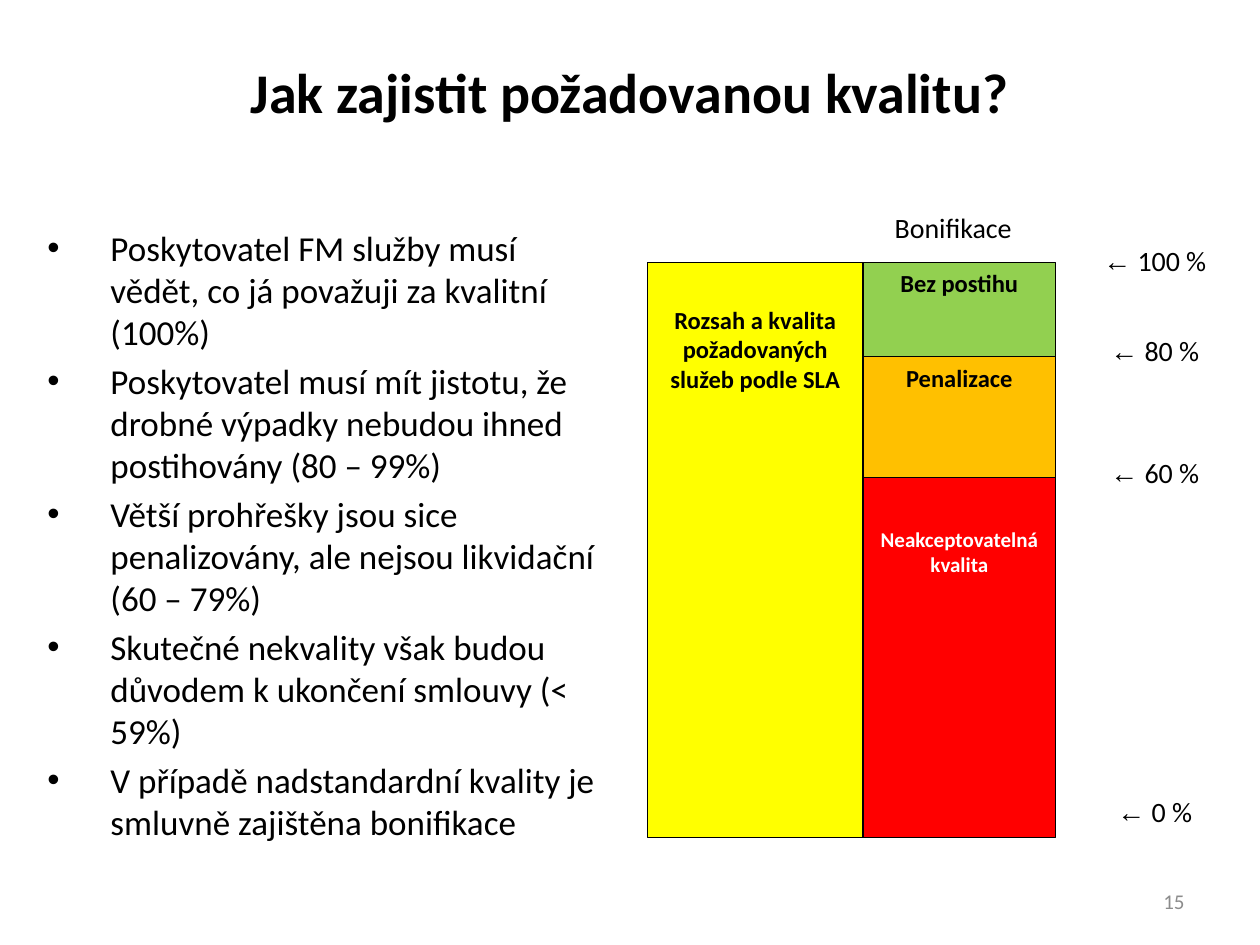
from lxml import etree
from pptx import Presentation
from pptx.dml.color import RGBColor
from pptx.enum.shapes import MSO_SHAPE
from pptx.enum.text import MSO_ANCHOR, PP_ALIGN
from pptx.oxml.ns import qn
from pptx.util import Pt

RECT = MSO_SHAPE.RECTANGLE
TOP, MIDDLE = MSO_ANCHOR.TOP, MSO_ANCHOR.MIDDLE
CENTER, RIGHT = PP_ALIGN.CENTER, PP_ALIGN.RIGHT

BLACK = RGBColor(0x00, 0x00, 0x00)
WHITE = RGBColor(0xFF, 0xFF, 0xFF)
GREY = RGBColor(0x8C, 0x8C, 0x8C)
YELLOW = RGBColor(0xFF, 0xFF, 0x00)
GREEN = RGBColor(0x92, 0xD0, 0x50)
ORANGE = RGBColor(0xFF, 0xC0, 0x00)
RED = RGBColor(0xFF, 0x00, 0x00)


def add_run(paragraph, text, size, color=BLACK, bold=False, font="Calibri"):
    run = paragraph.add_run()
    run.text = text
    run.font.name = font
    run.font.size = Pt(size)
    run.font.bold = bold
    run.font.color.rgb = color


def add_box(left, top, width, height, fill, outlined=False, inset=3.6):
    """Add a filled rectangle and return its centred first paragraph."""
    box = slide.shapes.add_shape(RECT, Pt(left), Pt(top), Pt(width), Pt(height))
    box.shadow.inherit = False
    box.fill.solid()
    box.fill.fore_color.rgb = fill
    if outlined:
        box.line.color.rgb = BLACK
        box.line.width = Pt(0.75)
    else:
        box.line.fill.background()
    frame = box.text_frame
    frame.word_wrap = True
    frame.vertical_anchor = TOP
    frame.margin_top = Pt(inset)
    frame.paragraphs[0].alignment = CENTER
    return frame.paragraphs[0]


prs = Presentation()
prs.slide_width, prs.slide_height = Pt(720), Pt(540)
slide = prs.slides.add_slide(prs.slide_layouts[5])

# Title
title = slide.shapes.title
title.left, title.top, title.width, title.height = Pt(36), Pt(21.6), Pt(648), Pt(61.2)
title.text_frame.vertical_anchor = MIDDLE
heading = title.text_frame.paragraphs[0]
heading.alignment = CENTER
add_run(heading, "Jak zajistit požadovanou kvalitu?", 32, bold=True)

# Bulleted rules
rules = [
    "Poskytovatel FM služby musí vědět, co já považuji za kvalitní (100%)",
    "Poskytovatel musí mít jistotu, že drobné výpadky nebudou ihned postihovány (80 – 99%)",
    "Větší prohřešky jsou sice penalizovány, ale nejsou likvidační (60 – 79%)",
    "Skutečné nekvality však budou důvodem k ukončení smlouvy (< 59%)",
    "V případě nadstandardní kvality je smluvně zajištěna bonifikace",
]
rules_frame = slide.shapes.add_textbox(Pt(20), Pt(126), Pt(334), Pt(356.4)).text_frame
rules_frame.word_wrap = True
for i, rule in enumerate(rules):
    item = rules_frame.add_paragraph() if i else rules_frame.paragraphs[0]
    item.space_before = Pt(4)
    properties = item._p.get_or_add_pPr()
    properties.set("marL", str(Pt(36)))
    properties.set("indent", str(-Pt(36)))
    etree.SubElement(properties, qn("a:buFont")).set("typeface", "Arial")
    etree.SubElement(properties, qn("a:buChar")).set("char", "•")
    add_run(item, rule, 20)

# Required scope column
scope_left, band_left, band_right = 370, 493.2, 603.2
column_top, column_bottom = 149.8, 478.6
scope = add_box(scope_left, column_top, band_left - scope_left,
                column_bottom - column_top, YELLOW, outlined=True, inset=24.5)
add_run(scope, "Rozsah a kvalita požadovaných služeb podle SLA", 14, bold=True)

# Quality bands, stacked: top, text, size, text colour, fill, inset
bands = [
    (column_top, "Bez postihu", 14, BLACK, GREEN, 3.6),
    (203.8, "Penalizace", 14, BLACK, ORANGE, 3.6),
    (272.9, "Neakceptovatelná kvalita", 12, WHITE, RED, 28),
]
band_bottoms = [band[0] for band in bands[1:]] + [column_bottom]
for (top, text, size, color, fill, inset), bottom in zip(bands, band_bottoms):
    band = add_box(band_left, top, band_right - band_left, bottom - top, fill,
                   outlined=True, inset=inset)
    add_run(band, text, size, color, bold=True)

# Bonus label above the bands
label_width, label_height = 103, 27.4
bonus = add_box(band_left, 116.6, label_width, label_height, WHITE)
add_run(bonus, "Bonifikace", 16)

# Percentage scale
for percent, top in [(100, 135.4), (80, 187.2), (60, 257), (0, 450.7)]:
    mark = add_box(608.4, top, label_width, label_height, WHITE)
    add_run(mark, "←", 16, font="Times New Roman")
    add_run(mark, f" {percent} %", 16)

# Slide number
number_frame = slide.shapes.add_textbox(Pt(516), Pt(500.4), Pt(168), Pt(28.8)).text_frame
number_frame.word_wrap = True
number_frame.vertical_anchor = MIDDLE
number = number_frame.paragraphs[0]
number.alignment = RIGHT
add_run(number, "15", 12, GREY)

prs.save("out.pptx")
